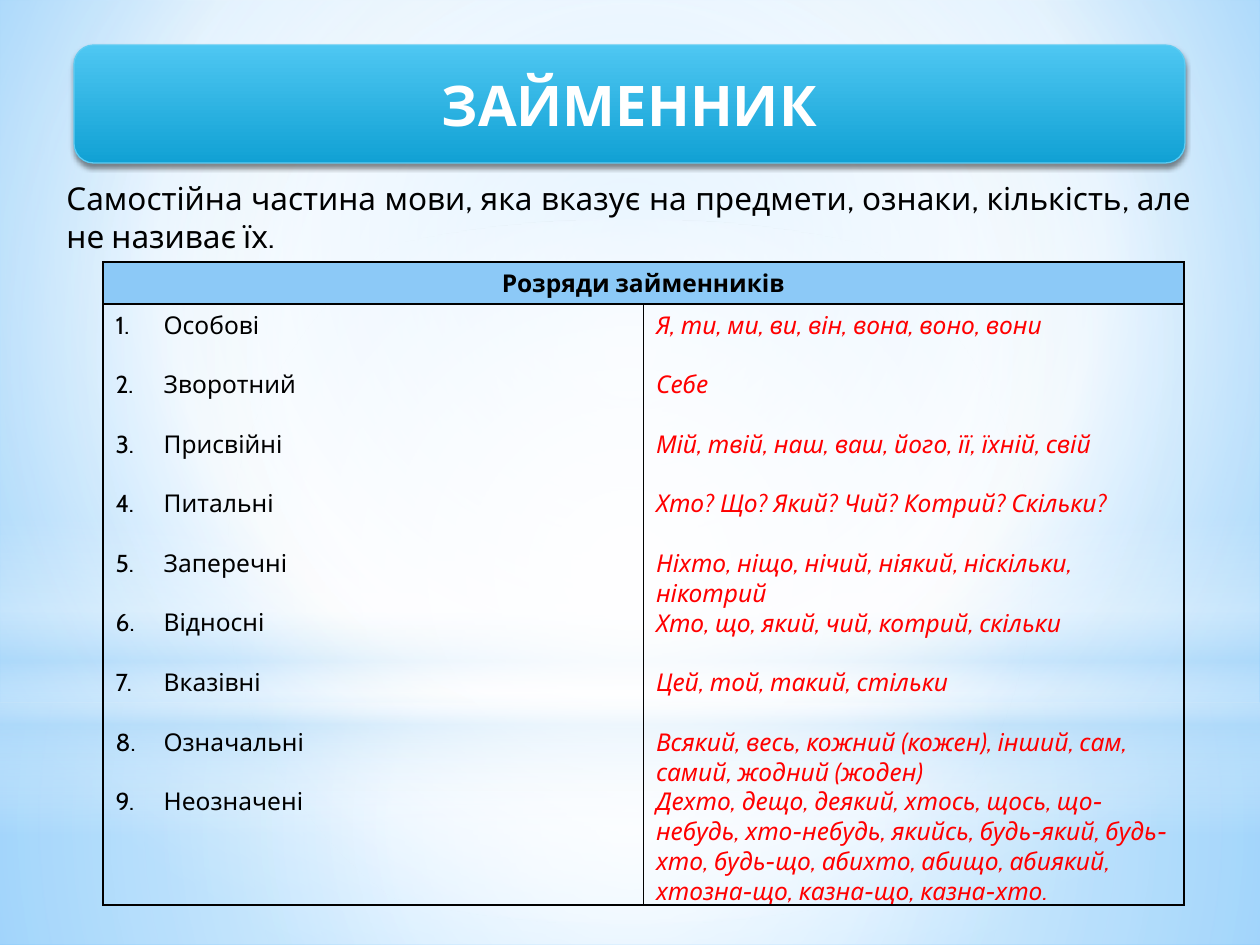
from lxml.etree import SubElement
from pptx import Presentation
from pptx.dml.color import RGBColor
from pptx.enum.shapes import MSO_SHAPE
from pptx.enum.text import MSO_ANCHOR, PP_ALIGN
from pptx.oxml.ns import qn
from pptx.util import Pt

SCALE = 914400 / 126
FONT = "Cabin"
WHITE, SKY = "FFFFFF", "B4DCFA"
CENTER = (50, 50, 50, 50)
WIDE = 45
KINDS = [
    ("Особові", "Я, ти, ми, ви, він, вона, воно, вони"),
    ("Зворотний", "Себе"),
    ("Присвійні", "Мій, твій, наш, ваш, його, її, їхній, свій"),
    ("Питальні", "Хто? Що? Який? Чий? Котрий? Скільки?"),
    ("Заперечні", "Ніхто, ніщо, нічий, ніякий, ніскільки, нікотрий"),
    ("Відносні", "Хто, що, який, чий, котрий, скільки"),
    ("Вказівні", "Цей, той, такий, стільки"),
    ("Означальні", "Всякий, весь, кожний (кожен), інший, сам, самий, жодний (жоден)"),
    ("Неозначені", "Дехто, дещо, деякий, хтось, щось, що-небудь, хто-небудь, якийсь, "
     "будь-який, будь-хто, будь-що, абихто, абищо, абиякий, хтозна-що, казна-що, казна-хто."),
]


def px(n):
    return round(n * SCALE)


def color(code):
    return RGBColor.from_string(code)


def tag(parent, name, **attrs):
    return SubElement(parent, qn("a:" + name), {k: str(v) for k, v in attrs.items()})


def tint(parent, code, alpha=100):
    node = tag(parent, "srgbClr", val=code)
    if alpha < 100:
        tag(node, "alpha", val=alpha * 1000)


def blend(fill, root, stops, focus=None):
    fill.gradient()
    grad = next(root.iter(qn("a:gradFill")))
    for child in list(grad):
        grad.remove(child)
    row = tag(grad, "gsLst")
    for pos, code, alpha in stops:
        tint(tag(row, "gs", pos=pos * 1000), code, alpha)
    if focus:
        sides = {k: v * 1000 for k, v in zip("ltrb", focus)}
        tag(tag(grad, "path", path="circle"), "fillToRect", **sides)
    else:
        tag(grad, "lin", ang=5400000, scaled=0)


def write(frame, text, size=14, ink="000000", bold=False, slant=False,
          align=PP_ALIGN.LEFT, gap=0, count=False):
    frame.word_wrap = True
    for i, line in enumerate(text.split("\n")):
        para = frame.paragraphs[0] if i == 0 else frame.add_paragraph()
        para.alignment = align
        para.space_after = Pt(gap if len(line) < WIDE else 0)
        if count:
            props = para._p.get_or_add_pPr()
            props.set("marL", str(px(48)))
            props.set("indent", str(px(-48)))
            tag(props, "buFont", typeface=FONT)
            tag(props, "buAutoNum", type="arabicPeriod")
        run = para.add_run()
        run.text = line
        font = run.font
        font.name, font.size = FONT, Pt(size)
        font.bold, font.italic = bold, slant
        font.color.rgb = color(ink)


class Deck:
    def __init__(self):
        self.show = Presentation()
        self.show.slide_width, self.show.slide_height = px(1260), px(945)
        self.slide = self.show.slides.add_slide(self.show.slide_layouts[6])

    def back(self, stops, focus):
        blend(self.slide.background.fill, self.slide._element, stops, focus)

    def shape(self, kind, box, stops, focus=None):
        item = self.slide.shapes.add_shape(kind, *map(px, box))
        item.shadow.inherit = False
        item.line.fill.background()
        blend(item.fill, item._element, stops, focus)
        return item

    def title(self, box, text):
        item = self.shape(MSO_SHAPE.ROUNDED_RECTANGLE, box,
                          [(0, "4EC7F2", 100), (100, "11A1D4", 100)])
        item.line.color.rgb = color("5ECCF3")
        item.line.width = Pt(0.75)
        glow = item._element.spPr.find(qn("a:effectLst"))
        tint(tag(glow, "outerShdw", blurRad=Pt(3.1), dist=Pt(1.8), dir=5400000,
                 algn="ctr", rotWithShape=0), "000000", 45)
        item.text_frame.vertical_anchor = MSO_ANCHOR.MIDDLE
        write(item.text_frame, text, size=32, ink=WHITE, bold=True, align=PP_ALIGN.CENTER)

    def text(self, box, text, **style):
        item = self.slide.shapes.add_textbox(*map(px, box))
        write(item.text_frame, text, **style)

    def table(self, box, rows, cols):
        grid = self.slide.shapes.add_table(len(rows), cols, *map(px, box)).table
        grid.first_row = grid.horz_banding = False
        for row, high in zip(grid.rows, rows):
            row.height = px(high)
        for cell in grid.iter_cells():
            cell.fill.background()
            props = cell._tc.get_or_add_tcPr()
            for i, side in enumerate("LRTB"):
                edge = tag(props, "ln" + side, w=Pt(1))
                tint(tag(edge, "solidFill"), "000000")
                props.insert(i, edge)
        return grid


def main():
    deck = Deck()
    deck.back([(0, "9ED5FF", 100), (60, WHITE, 100), (100, "5BB9FF", 100)], (20, 10, 20, 60))
    rect = MSO_SHAPE.RECTANGLE
    deck.shape(rect, (0, 703, 1260, 242),
               [(0, WHITE, 91), (37, WHITE, 76), (100, SKY, 79)], CENTER)
    deck.shape(rect, (0, 0, 1260, 703),
               [(0, WHITE, 89), (48, WHITE, 62), (100, SKY, 79)], CENTER)
    deck.shape(rect, (0, 519, 1260, 315),
               [(0, WHITE, 0), (29, WHITE, 30), (45, SKY, 40),
                (55, WHITE, 26), (65, SKY, 60), (100, WHITE, 0)])
    deck.shape(MSO_SHAPE.OVAL, (0, 220, 1260, 703), [(0, WHITE, 100), (56, WHITE, 0)], CENTER)
    deck.title((74, 45, 1111, 118), "ЗАЙМЕННИК")
    deck.text((54, 173, 1150, 89),
              "Самостійна частина мови, яка вказує на предмети, ознаки, кількість, "
              "але не називає їх.", size=18, align=PP_ALIGN.JUSTIFY)

    grid = deck.table((103, 262, 1081, 643), (42, 601), 2)
    head = grid.cell(0, 0)
    head.merge(grid.cell(0, 1))
    head.fill.solid()
    head.fill.fore_color.rgb = color("8CC9F7")
    write(head.text_frame, "Розряди займенників", bold=True, align=PP_ALIGN.CENTER)
    names, words = ("\n".join(part) for part in zip(*KINDS))
    left, right = grid.cell(1, 0), grid.cell(1, 1)
    left.margin_bottom = right.margin_bottom = 0
    write(left.text_frame, names, gap=17, count=True)
    write(right.text_frame, words, ink="FF0000", slant=True, gap=17)
    deck.show.save("out.pptx")


if __name__ == "__main__":
    main()
